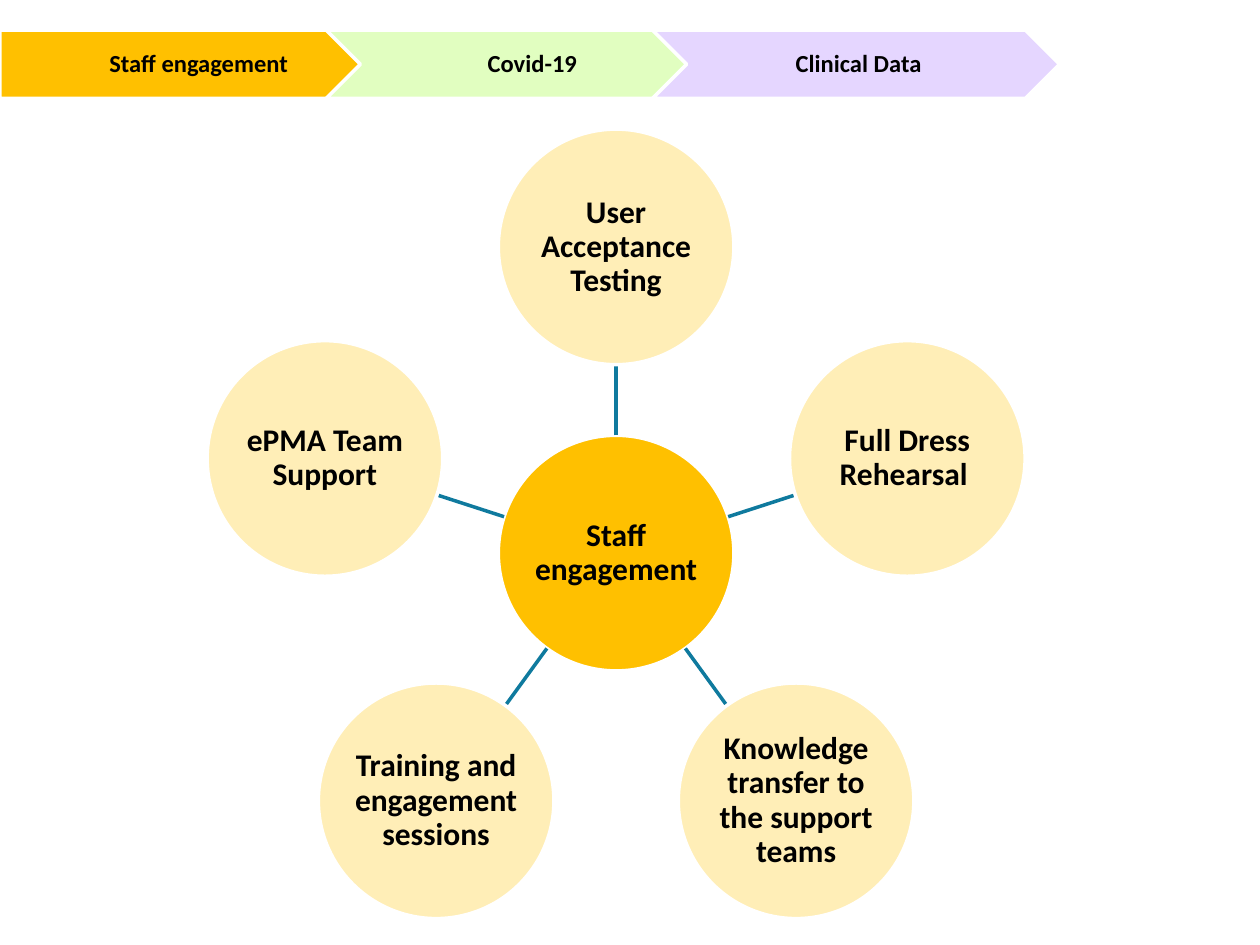
import math
from dataclasses import dataclass

import pptx
import pptx.util
from lxml import etree
from pptx.dml.color import RGBColor
from pptx.enum.shapes import MSO_CONNECTOR, MSO_SHAPE
from pptx.enum.text import MSO_ANCHOR, PP_ALIGN
from pptx.oxml.ns import qn
from pptx.util import Inches

AMBER = RGBColor(0xFF, 0xC0, 0x00)
CREAM = RGBColor(0xFF, 0xEE, 0xB7)
GREEN = RGBColor(0xE1, 0xFE, 0xC0)
LILAC = RGBColor(0xE5, 0xD6, 0xFF)
TEAL = RGBColor(0x0F, 0x7A, 0x9E)
WHITE = RGBColor(0xFF, 0xFF, 0xFF)
BLACK = RGBColor(0x00, 0x00, 0x00)

HUB_X, HUB_Y = 4.89, 4.39
DIAMETER = 1.87
ORBIT = 2.43
STEP_WIDTH, STEP_HEIGHT, STEP_PITCH, STEP_TOP = 3.23, 0.54, 2.59, 0.24


@dataclass
class Label:
    text: str
    size: int
    margins: tuple[float, float, float, float]


@dataclass
class Step:
    text: str
    kind: MSO_SHAPE
    fill: RGBColor
    left_margin: float


STEPS = [
    Step("Staff engagement", MSO_SHAPE.PENTAGON, AMBER, 0.08),
    Step("Covid-19", MSO_SHAPE.CHEVRON, GREEN, 0.06),
    Step("Clinical Data", MSO_SHAPE.CHEVRON, LILAC, 0.06),
]
TOPICS = [
    "User Acceptance Testing",
    "Full Dress Rehearsal ",
    "Knowledge transfer to the support teams",
    "Training and engagement sessions",
    "ePMA Team Support",
]


def add_labelled_shape(slide, kind: MSO_SHAPE, left: float, top: float, width: float,
                       height: float, fill: RGBColor, label: Label) -> None:
    shape = slide.shapes.add_shape(kind, Inches(left), Inches(top), Inches(width), Inches(height))
    shape.shadow.inherit = False
    shape.fill.solid()
    shape.fill.fore_color.rgb = fill
    shape.line.color.rgb = WHITE
    shape.line.width = pptx.util.Pt(2)

    frame = shape.text_frame
    frame.word_wrap = True
    frame.vertical_anchor = MSO_ANCHOR.MIDDLE
    (frame.margin_left, frame.margin_top,
     frame.margin_right, frame.margin_bottom) = map(Inches, label.margins)
    para = frame.paragraphs[0]
    para.alignment = PP_ALIGN.CENTER
    para.line_spacing = 0.9
    span = para.add_run()
    span.text = label.text
    span.font.name = "Calibri"
    span.font.size = pptx.util.Pt(label.size)
    span.font.bold = True
    span.font.color.rgb = BLACK


def add_circle(slide, x: float, y: float, fill: RGBColor, text: str) -> None:
    """Add a circle centred on (x, y)."""
    radius = DIAMETER / 2
    add_labelled_shape(slide, MSO_SHAPE.OVAL, x - radius, y - radius, DIAMETER, DIAMETER,
                       fill, Label(text, 18, (0.01, 0.01, 0.01, 0.01)))


def orbit_point(angle: float, distance: float) -> tuple[float, float]:
    """Return the point at a distance from the hub, clockwise from the top."""
    return HUB_X + distance * math.sin(angle), HUB_Y - distance * math.cos(angle)


def add_spoke(slide, angle: float) -> None:
    """Join the rim of the hub to the rim of the circle at this angle."""
    start = orbit_point(angle, DIAMETER / 2)
    end = orbit_point(angle, ORBIT - DIAMETER / 2)
    spoke = slide.shapes.add_connector(MSO_CONNECTOR.STRAIGHT, *map(Inches, start + end))
    spoke.line.color.rgb = TEAL
    spoke.line.width = pptx.util.Pt(2)
    etree.SubElement(spoke._element.spPr, qn("a:effectLst"))


def add_step(slide, index: int, step: Step) -> None:
    add_labelled_shape(slide, step.kind, index * STEP_PITCH, STEP_TOP, STEP_WIDTH, STEP_HEIGHT,
                       step.fill, Label(step.text, 14, (step.left_margin, 0.04, 0.02, 0.04)))


def main() -> None:
    deck = pptx.Presentation()
    deck.slide_width, deck.slide_height = Inches(10), Inches(7.5)
    slide = deck.slides.add_slide(deck.slide_layouts[6])

    add_circle(slide, HUB_X, HUB_Y, AMBER, "Staff engagement ")
    for index, topic in enumerate(TOPICS):
        angle = index * math.tau / len(TOPICS)
        add_spoke(slide, angle)
        add_circle(slide, *orbit_point(angle, ORBIT), CREAM, topic)
    for index, step in enumerate(STEPS):
        add_step(slide, index, step)

    deck.save("out.pptx")


if __name__ == "__main__":
    main()
